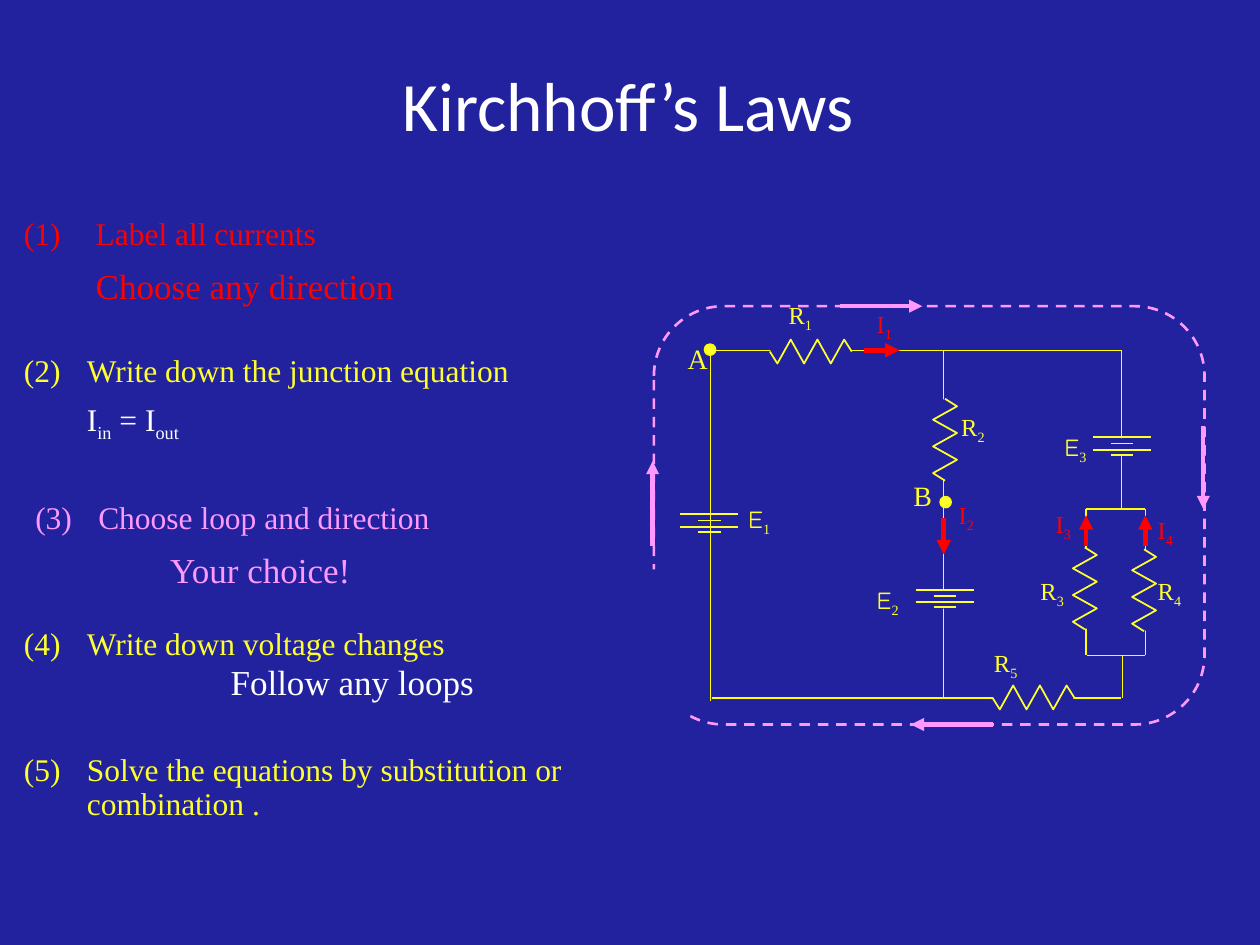
from dataclasses import dataclass

from lxml.etree import SubElement
from pptx import Presentation
from pptx.dml.color import RGBColor
from pptx.enum.dml import MSO_LINE
from pptx.enum.shapes import MSO_CONNECTOR, MSO_SHAPE
from pptx.enum.text import MSO_ANCHOR, MSO_AUTO_SIZE, PP_ALIGN
from pptx.oxml.ns import qn
from pptx.util import Inches, Pt

COLUMNS, ROWS = 100, 75
SERIF, SANS, HAND = "Times New Roman", "Calibri", "Comic Neue"
COLOURS = {
    "ground": "22229E",
    "white": "FFFFFF",
    "wire": "FFFF00",
    "part": "FFFF2D",
    "current": "FF0000",
    "loop": "FF99FF",
}


@dataclass
class Line:
    text: str
    colour: str
    indent: float
    before: float
    size: int = 18
    number: int = 0


@dataclass
class Label:
    text: str
    left: float
    top: float
    width: float
    colour: str = "part"
    font: str = SERIF
    size: int = 14


@dataclass
class Part:
    column: float
    row: float
    upright: bool = True


STEPS = [
    Line("Label all currents", "current", 5.7, 0, number=1),
    Line("Choose any direction", "current", 5.7, 11.5, 20),
    Line("Write down the junction equation", "part", 5, 27.5, number=2),
    Line("I_in_ = I_out", "white", 5, 11.5),
    Line("Choose loop and direction", "loop", 5.9, 33.5, number=3),
    Line("Your choice!", "loop", 11.6, 12, 20),
    Line("Write down voltage changes", "part", 5, 21, number=4),
    Line("Follow any loops", "white", 16.4, 4, 20),
    Line("Solve the equations by substitution or combination .", "part", 5, 29, number=5),
]
WIRES = [
    (56.4, 27.8, 56.4, 55.6), (56.5, 27.8, 89, 27.8), (74.9, 27.8, 74.9, 55.4),
    (89, 27.8, 89, 40.4), (56.5, 55.4, 89, 55.4), (86.2, 40.4, 90.9, 40.4),
    (86.3, 52, 90.9, 52), (89.1, 52, 89.1, 55.4), (86.2, 40.4, 86.2, 52),
    (90.9, 40.4, 90.9, 52),
]
RESISTORS = [
    Part(64.35, 27.9, False), Part(75, 34.9), Part(82, 55.35, False),
    Part(86.1, 46.7), Part(90.8, 46.85),
]
BATTERIES = [Part(56.3, 40.8), Part(75, 46.8), Part(89.05, 34.7)]
CURRENTS = [
    (68.6, 27.8, 71.4, 27.8), (74.9, 41.1, 74.9, 44),
    (86.2, 43.3, 86.2, 40.9), (90.9, 43.3, 90.9, 40.9),
]
LOOP_ARROWS = [
    (66.7, 24.3, 73.2, 24.3), (95.5, 33.8, 95.5, 40.4),
    (78.8, 57.5, 72.3, 57.5), (51.8, 43.3, 51.8, 36.6),
]
JUNCTIONS = [(55.9, 27.3), (74.6, 39.4)]
LABELS = [
    Label("R_1", 61.6, 23.3, 12.8), Label("R_2", 75.3, 32.2, 12.8),
    Label("R_3", 81.6, 45.2, 7.4), Label("R_4", 90.9, 45.2, 7.4),
    Label("R_5", 77.9, 50.9, 12.8),
    Label("E_1", 58.4, 39.5, 4.7, font=HAND), Label("E_2", 68.6, 45.9, 4.6, font=HAND),
    Label("E_3", 83.5, 33.8, 4.7, font=HAND),
    Label("I_1", 68.6, 24, 5.6, "current"), Label("I_2", 75.1, 39.2, 5.6, "current"),
    Label("I_3", 82.8, 39.9, 5.6, "current"), Label("I_4", 90.9, 40.4, 5.6, "current"),
    Label("A", 53.6, 26.6, 4.7, size=16), Label("B", 71.5, 37.5, 4.7, size=16),
]


def cell(count: float) -> int:
    return Inches(count * 10 / COLUMNS)


def rgb(name: str) -> RGBColor:
    return RGBColor.from_string(COLOURS[name])


def place(shape, left: float, top: float, width: float, height: float) -> None:
    shape.left, shape.top = cell(left), cell(top)
    shape.width, shape.height = cell(width), cell(height)


def write(para, text: str, font: str, size: float, colour: str) -> None:
    para.font.size, para.font.name = Pt(size), font
    para.font.color.rgb = rgb(colour)
    for index, piece in enumerate(text.split("_")):
        span = para.add_run()
        span.text = piece
        if index % 2:
            span.font.name = SERIF
            span._r.get_or_add_rPr().set("baseline", "-25000")


def write_title(page) -> None:
    title = page.shapes.title
    place(title, 25.8, 5, 48.1, 6.4)
    title.text_frame.vertical_anchor = MSO_ANCHOR.MIDDLE
    title.text_frame.auto_size = MSO_AUTO_SIZE.NONE
    para = title.text_frame.paragraphs[0]
    para.alignment = PP_ALIGN.CENTER
    write(para, "Kirchhoff’s Laws", SANS, 39.6, "white")


def format_bullet(para, line: Line) -> None:
    properties = para._p.get_or_add_pPr()
    properties.set("marL", str(cell(line.indent)))
    properties.set("indent", str(-cell(5 if line.number < 2 else 5) if line.number else 0))
    if line.number == 1:
        properties.set("indent", str(-cell(line.indent)))
    if line.number:
        colour = SubElement(properties, qn("a:buClr"))
        SubElement(colour, qn("a:srgbClr"), val=COLOURS[line.colour])
        SubElement(properties, qn("a:buFont"), typeface=SERIF)
        SubElement(properties, qn("a:buAutoNum"), type="arabicParenBoth", startAt=str(line.number))
    else:
        SubElement(properties, qn("a:buNone"))


def write_steps(page) -> None:
    body = page.placeholders[1]
    place(body, 0.8, 16.7, 50.8, 52.4)
    frame = body.text_frame
    frame.auto_size, frame.vertical_anchor = MSO_AUTO_SIZE.NONE, MSO_ANCHOR.TOP
    frame.margin_left = frame.margin_right = cell(1.1)
    frame.margin_top = frame.margin_bottom = cell(0.6)
    for index, line in enumerate(STEPS):
        para = frame.add_paragraph() if index else frame.paragraphs[0]
        format_bullet(para, line)
        para.line_spacing, para.space_before = Pt(19.5), Pt(line.before)
        write(para, line.text, SERIF, line.size, line.colour)


def draw_line(page, ends: tuple, colour: str, width: float, arrow: bool = False) -> None:
    line = page.shapes.add_connector(MSO_CONNECTOR.STRAIGHT, *map(cell, ends))
    line.line.color.rgb, line.line.width = rgb(colour), Pt(width)
    if arrow:
        SubElement(line.line._get_or_add_ln(), qn("a:tailEnd"), type="triangle")
    SubElement(line._element.spPr, qn("a:effectLst"))


def draw_shape(page, kind, box: tuple, fill: str = "", line: str = "", width: float = 0.75):
    shape = page.shapes.add_shape(kind, *map(cell, box))
    paint(shape, fill, line, width)
    return shape


def paint(shape, fill: str, line: str, width: float) -> None:
    shape.shadow.inherit = False
    if fill:
        shape.fill.solid()
        shape.fill.fore_color.rgb = rgb(fill)
    else:
        shape.fill.background()
    if line:
        shape.line.color.rgb, shape.line.width = rgb(line), Pt(width)
    else:
        shape.line.fill.background()


def draw_resistor(page, part: Part) -> None:
    width, height = (2, 6.4) if part.upright else (6.4, 2)
    box = (part.column - width / 2, part.row - height / 2, width, height)
    draw_shape(page, MSO_SHAPE.RECTANGLE, box, "ground")
    peaks = [(1.06 * (i - 2.5), -0.95 if i % 2 else 0.95) for i in range(6)]
    points = [
        (cell(part.column - across), cell(part.row - along)) if part.upright
        else (cell(part.column + along), cell(part.row + across))
        for along, across in [(-3.25, 0), *peaks, (3.25, 0)]
    ]
    builder = page.shapes.build_freeform(*points[0])
    builder.add_line_segments(points[1:], close=False)
    paint(builder.convert_to_shape(), "ground", "part", 1)


def draw_battery(page, part: Part, gap: bool) -> None:
    if gap:
        box = (part.column - 2.75, part.row + 0.1, 5.5, 1.4)
        draw_shape(page, MSO_SHAPE.RECTANGLE, box, "ground")
    for down, half in ((0, 2.3), (0.5, 0.9), (1, 2.3), (1.4, 0.9)):
        row = part.row + down
        draw_line(page, (part.column - half, row, part.column + half, row), "part", 1)


def draw_label(page, label: Label) -> None:
    box = page.shapes.add_textbox(*map(cell, (label.left, label.top, label.width, 3.3)))
    box.text_frame.word_wrap = True
    write(box.text_frame.paragraphs[0], label.text, label.font, label.size, label.colour)


def draw_circuit(page) -> None:
    for wire in WIRES:
        draw_line(page, wire, "wire", 0.75)
    for resistor in RESISTORS:
        draw_resistor(page, resistor)
    for index, battery in enumerate(BATTERIES):
        draw_battery(page, battery, gap=index > 0)
    loop = draw_shape(page, MSO_SHAPE.ROUNDED_RECTANGLE, (51.9, 24.3, 43.7, 33.2), "", "loop", 1.5)
    loop.line.dash_style = MSO_LINE.DASH
    draw_shape(page, MSO_SHAPE.RECTANGLE, (50, 45.2, 4.7, 12.3), "ground")
    for colour, width, arrows in (("current", 2.75, CURRENTS), ("loop", 2.5, LOOP_ARROWS)):
        for arrow in arrows:
            draw_line(page, arrow, colour, width, arrow=True)
    for left, top in JUNCTIONS:
        draw_shape(page, MSO_SHAPE.OVAL, (left, top, 0.9, 0.9), "part", "wire")
    for label in LABELS:
        draw_label(page, label)


def main() -> None:
    deck = Presentation()
    deck.slide_width, deck.slide_height = cell(COLUMNS), cell(ROWS)
    page = deck.slides.add_slide(deck.slide_layouts[1])
    page.background.fill.solid()
    page.background.fill.fore_color.rgb = rgb("ground")
    write_title(page)
    write_steps(page)
    draw_circuit(page)
    deck.save("out.pptx")


if __name__ == "__main__":
    main()
